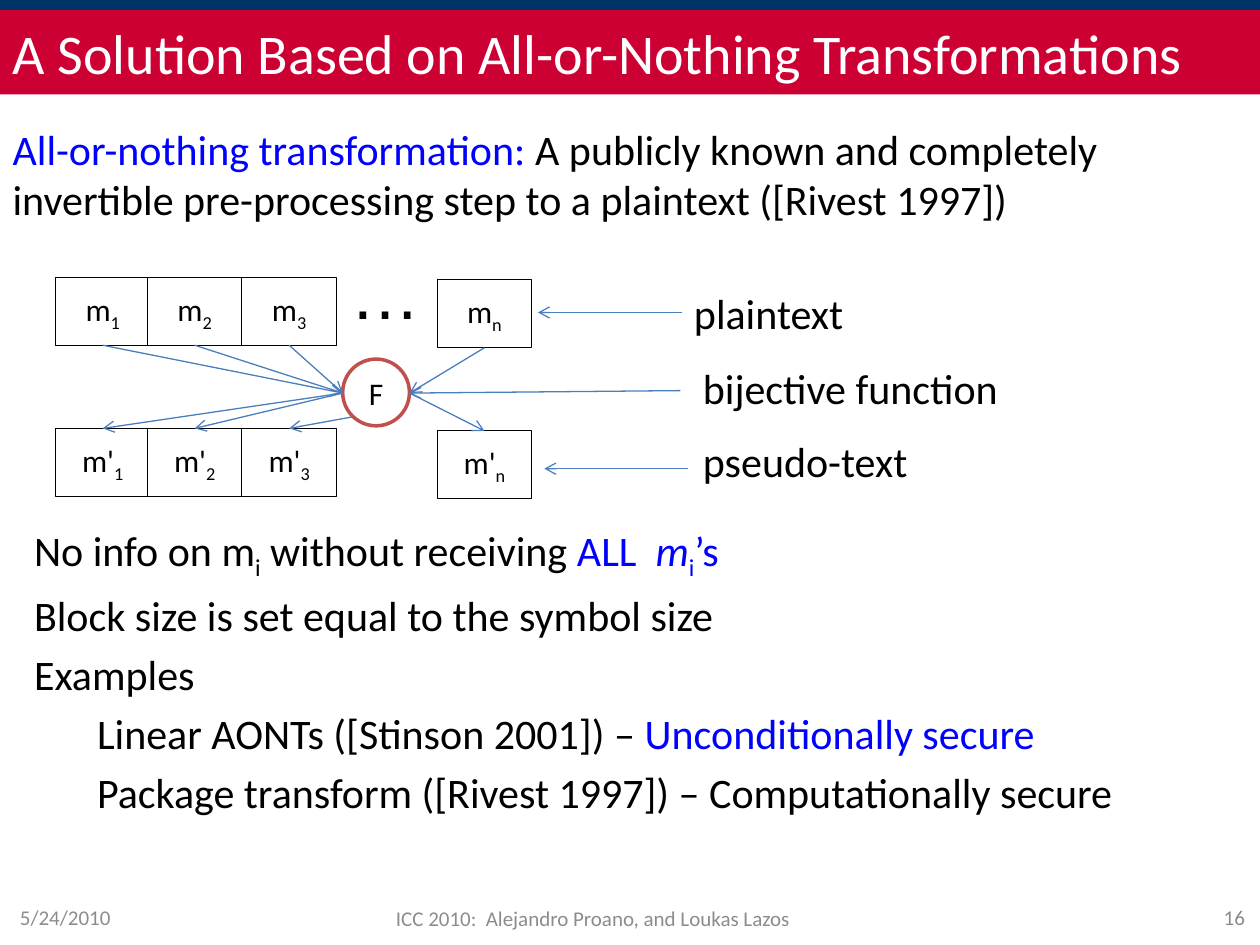
import pptx
import pptx.util
import pptx.dml.color
import pptx.enum.shapes
import pptx.enum.text
import pptx.oxml
import pptx.oxml.ns

BLUE, LINK, GREY = "0000FF", "4B7EBC", "8C8C8C"
FORMS = pptx.enum.shapes.MSO_SHAPE
ALIGN = pptx.enum.text.PP_ALIGN
FIT = pptx.enum.text.MSO_AUTO_SIZE
SUB = {"base": -25}


def unit(num):
    """Turn cells of a 100 by 75 grid into a length."""
    return pptx.util.Inches(num / 10)


def tint(part, code):
    """Give a solid fill or a font colour from a hex string."""
    if hasattr(part, "solid"):
        part.solid()
        part = part.fore_color
    else:
        part = part.color
    part.rgb = pptx.dml.color.RGBColor.from_string(code)


def place(shape, area):
    """Move a shape to left, top, width and height in cells."""
    shape.left, shape.top, shape.width, shape.height = map(unit, area)


def write(shape, paras, size=24, color="000000", font="Calibri", align=ALIGN.LEFT,
          mid=False, wrap=True, fit=FIT.NONE, plain=False, gap=0):
    """Fill a shape with (level, runs) paragraphs in one format."""
    frame = shape.text_frame
    frame.word_wrap, frame.auto_size = wrap, fit
    anchor = pptx.enum.text.MSO_ANCHOR
    frame.vertical_anchor = anchor.MIDDLE if mid else anchor.TOP
    for num, (level, runs) in enumerate(paras):
        para = frame.add_paragraph() if num else frame.paragraphs[0]
        para.level, para.alignment = level, align
        if plain:
            props = para._p.get_or_add_pPr()
            props.set("marL", str(unit(5 * level)))
            props.set("indent", "0")
            pptx.oxml.ns.qn("a:buNone")
            props.append(pptx.oxml.parse_xml(
                "<a:buNone %s/>" % pptx.oxml.ns.nsdecls("a")))
        para.space_before = pptx.util.Pt(gap if num else 0)
        for words, style in runs:
            run = para.add_run()
            run.text = words
            run.font.size, run.font.name = pptx.util.Pt(size), font
            tint(run.font, style.get("color", color))
            if style.get("slant"):
                run.font.italic = True
            if "base" in style:
                run.font._element.set("baseline", str(style["base"] * 1000))


def line(words):
    """Wrap plain words as a single paragraph."""
    return [(0, [(words, {})])]


def label(slide, words, area, **form):
    """Add a text box with one line of words."""
    box = slide.shapes.add_textbox(*map(unit, area))
    write(box, line(words), **form)


def draw(slide, kind, area, fill, edge, width):
    """Add a filled and outlined shape."""
    shape = slide.shapes.add_shape(kind, *map(unit, area))
    shape.shadow.inherit = False
    tint(shape.fill, fill)
    tint(shape.line.fill, edge)
    shape.line.width = pptx.util.Pt(width)
    return shape


def block(slide, name, index, left, top):
    """Add one message block with a lowered index."""
    box = draw(slide, FORMS.RECTANGLE, (left, top, 7.5, 5.4), "FFFFFF", "000000", 0.5)
    write(box, [(0, [(name, {}), (index, SUB)])], size=18, align=ALIGN.CENTER, mid=True)
    return box


def arrow(slide, start, end):
    """Add an arrow between points or (block, side) pairs."""
    kind = pptx.enum.shapes.MSO_CONNECTOR.STRAIGHT
    ends = [(0, 0) if hasattr(spot[0], "shape_id") else spot for spot in (start, end)]
    link = slide.shapes.add_connector(kind, *map(unit, ends[0] + ends[1]))
    for spot, join in ((start, link.begin_connect), (end, link.end_connect)):
        if hasattr(spot[0], "shape_id"):
            join(*spot)
    tint(link.line.fill, LINK)
    link.line.width = pptx.util.Pt(0.75)
    space = pptx.oxml.ns.nsdecls("a")
    link.line._get_or_add_ln().append(
        pptx.oxml.parse_xml('<a:tailEnd %s type="arrow"/>' % space))
    link._element.spPr.append(pptx.oxml.parse_xml("<a:effectLst %s/>" % space))


def head(slide):
    """Build the top band and the title."""
    band = draw(slide, FORMS.RECTANGLE, (0, 0, 100, 0.8), "003366", "003366", 2)
    slide.shapes._spTree.insert(2, band._element)
    title = slide.shapes.title
    place(title, (0, 0.8, 100, 6.7))
    tint(title.fill, "CC0033")
    write(title, line("A Solution Based on All-or-Nothing Transformations"),
          size=32, color="FFFFFF", mid=True)


def lists(slide):
    """Fill the definition and the list of points."""
    intro, points = slide.placeholders[1], slide.placeholders[2]
    place(intro, (0, 9.3, 95.7, 15.2))
    place(points, (1.7, 41.1, 95.7, 20.7))
    blue = {"color": BLUE}
    write(intro, [(0, [
        ("All-or-nothing transformation: ", blue),
        ("A publicly known and completely invertible pre-processing step "
         "to a plaintext ([Rivest 1997])", {})])], plain=True)
    write(points, [
        (0, [("No info on m", {}), ("i", SUB), (" without receiving ", {}),
             ("ALL  ", blue), ("m", {"slant": True, **blue}),
             ("i", {**SUB, **blue}), ("’s", blue)]),
        (0, [("Block size is set equal to the symbol size", {})]),
        (0, [("Examples", {})]),
        (1, [("Linear AONTs ([Stinson 2001]) – ", {}), ("Unconditionally secure", blue)]),
        (1, [("Package transform ([Rivest 1997]) – Computationally secure", {})]),
    ], plain=True, gap=4.8)


def graph(slide):
    """Draw the blocks, the function and their arrows."""
    cols = (("1", 4.4, 0), ("2", 11.7, 0), ("3", 19.2, 0), ("n", 34.7, 0.2))
    tops, lows = ([block(slide, name, index, left, top + drop)
                   for index, left, drop in cols]
                  for name, top in (("m", 22), ("m'", 34)))
    ring = draw(slide, FORMS.OVAL, (27.2, 28.5, 5.3, 5.3), "FFFFFF", "C0504D", 2)
    write(ring, line("F"), size=18, align=ALIGN.CENTER, mid=True)
    west, east, slope = (27.2, 31.2), (32.5, 31.2), (27.9, 33.1)
    for box, port in zip(tops, (west, west, west, east)):
        arrow(slide, (box, 2), port)
    for box, port in zip(lows, (west, west, slope, east)):
        arrow(slide, port, (box, 0))
    for start, end in (((54.1, 24.8), (42.7, 24.8)), ((54, 31), east),
                       ((54.6, 37.2), (43.2, 37.2))):
        arrow(slide, start, end)
    loose = {"wrap": False, "fit": FIT.SHAPE_TO_FIT_TEXT}
    label(slide, "…", (26.8, 19.3, 7.6, 7.7), size=40, font="Arial", **loose)
    for words, left, top, width in (("plaintext", 54.1, 22.3, 14.7),
                                    ("bijective function", 54.8, 28.3, 26.5),
                                    ("pseudo-text", 54.8, 34.1, 19.1)):
        label(slide, words, (left, top, width, 5), **loose)


def foot(slide):
    """Add the date, the credit and the page number."""
    for words, area, align in (
            ("5/24/2010", (0.6, 70.8, 23.3, 4), ALIGN.LEFT),
            ("ICC 2010:  Alejandro Proano, and Loukas Lazos",
             (20.7, 70.8, 43, 4.2), ALIGN.RIGHT),
            ("16", (76.5, 70.8, 23.3, 4), ALIGN.RIGHT)):
        label(slide, words, area, size=12, color=GREY, align=align, mid=True)


def main():
    """Build the slide and save it."""
    deck = pptx.Presentation()
    deck.slide_width, deck.slide_height = unit(100), unit(75)
    slide = deck.slides.add_slide(deck.slide_layouts[3])
    for part in (head, lists, graph, foot):
        part(slide)
    deck.save("out.pptx")


if __name__ == "__main__":
    main()
